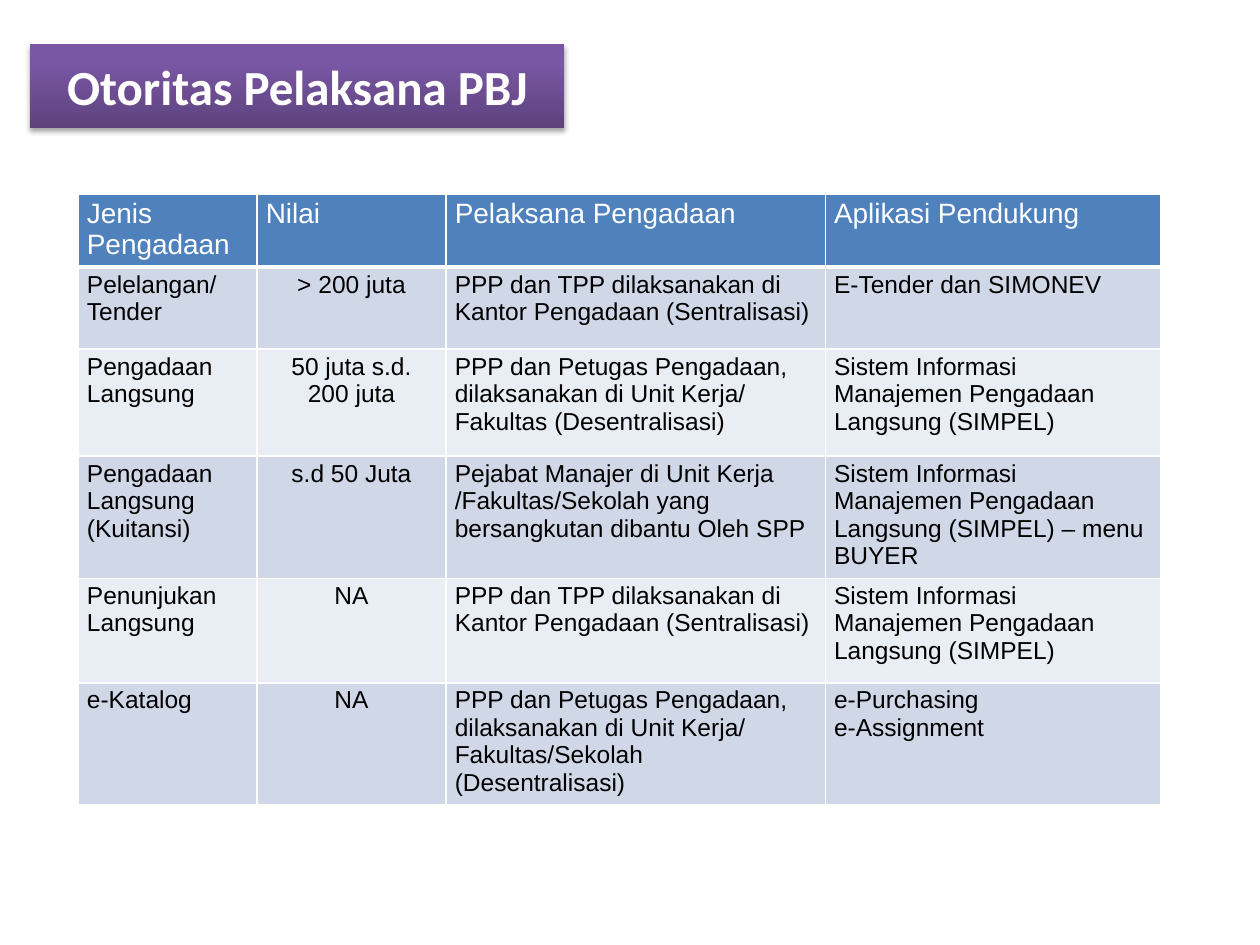
from lxml.etree import SubElement
from pptx import Presentation
from pptx.dml.color import RGBColor
from pptx.enum.shapes import MSO_SHAPE
from pptx.enum.text import MSO_ANCHOR, PP_ALIGN
from pptx.oxml import parse_xml
from pptx.oxml.ns import nsdecls, qn
from pptx.util import Inches, Pt

WHITE, BLACK = "FFFFFF", "000000"
HEADER_FILL = "4F81BD"
BAND_FILLS = ["E9EDF4", "D0D8E8"]
TITLE_STOPS = [(0, "5D427D"), (80, "7A57A5"), (100, "7A56A7")]

COL_WIDTHS = [1.42, 1.5, 3.01, 2.66]
ROW_HEIGHTS = [0.58, 0.65, 0.85, 0.97, 0.83, 0.97]
VALUE_COL = 1
CENTRAL = "PPP dan TPP dilaksanakan di Kantor Pengadaan (Sentralisasi)"
SIMPEL = "Sistem Informasi Manajemen Pengadaan Langsung (SIMPEL)"
ROWS = [
    ["Jenis Pengadaan", "Nilai", "Pelaksana Pengadaan", "Aplikasi Pendukung"],
    ["Pelelangan/ Tender", "> 200 juta", CENTRAL, "E-Tender dan SIMONEV"],
    ["Pengadaan Langsung", "50 juta s.d.\n200 juta",
     "PPP dan Petugas Pengadaan, dilaksanakan di Unit Kerja/ Fakultas (Desentralisasi)",
     SIMPEL],
    ["Pengadaan Langsung (Kuitansi)", "s.d 50 Juta",
     "Pejabat Manajer di Unit Kerja /Fakultas/Sekolah yang bersangkutan dibantu Oleh SPP",
     f"{SIMPEL} – menu BUYER"],
    ["Penunjukan Langsung", "NA", CENTRAL, SIMPEL],
    ["e-Katalog", "NA",
     "PPP dan Petugas Pengadaan, dilaksanakan di Unit Kerja/ Fakultas/Sekolah (Desentralisasi)",
     "e-Purchasing\ne-Assignment"],
]


def rgb(value):
    return RGBColor.from_string(value)


def set_attrs(obj, values):
    for name, value in values.items():
        setattr(obj, name, value)


def write_text(tf, text, align, color, **font):
    """Fill a text frame, one paragraph for each line of text."""
    tf.text = text
    for p in tf.paragraphs:
        p.alignment = align
        for r in p.runs:
            set_attrs(r.font, font)
            r.font.color.rgb = rgb(color)


def add_border(cell, side, width):
    ln = SubElement(cell._tc.get_or_add_tcPr(), qn(f"a:ln{side}"), w=str(Pt(width)))
    fill = SubElement(ln, qn("a:solidFill"))
    SubElement(fill, qn("a:srgbClr"), val=WHITE)


def format_cell(cell, text, row, col):
    header = row == 0
    set_attrs(cell, {
        "margin_left": Inches(0.07), "margin_right": Inches(0.07),
        "margin_top": Inches(0.03), "margin_bottom": Inches(0.03),
    })
    for side in "LRTB":
        add_border(cell, side, 3 if header and side == "B" else 1)
    cell.fill.solid()
    cell.fill.fore_color.rgb = rgb(HEADER_FILL if header else BAND_FILLS[row % 2])
    centred = col == VALUE_COL and not header
    write_text(cell.text_frame, text, PP_ALIGN.CENTER if centred else PP_ALIGN.LEFT,
               WHITE if header else BLACK,
               name="Arial", size=Pt(16 if header else 14), bold=False)


def add_procurement_table(slide):
    table = slide.shapes.add_table(
        len(ROWS), len(COL_WIDTHS), Inches(0.62), Inches(1.54),
        Inches(sum(COL_WIDTHS)), Inches(sum(ROW_HEIGHTS))).table
    set_attrs(table, {"first_row": False, "horz_banding": False})
    for column, width in zip(table.columns, COL_WIDTHS):
        column.width = Inches(width)
    for row, height in zip(table.rows, ROW_HEIGHTS):
        row.height = Inches(height)
    for i, texts in enumerate(ROWS):
        for j, text in enumerate(texts):
            format_cell(table.cell(i, j), text, i, j)


def add_gradient_and_shadow(sp):
    """Give a shape the upward title gradient and a soft shadow below."""
    stops = "".join(f'<a:gs pos="{pos * 1000}"><a:srgbClr val="{color}"/></a:gs>'
                    for pos, color in TITLE_STOPS)
    gradient = parse_xml(
        f'<a:gradFill {nsdecls("a")} rotWithShape="1"><a:gsLst>{stops}</a:gsLst>'
        '<a:lin ang="16200000" scaled="0"/></a:gradFill>')
    shadow = parse_xml(
        f'<a:effectLst {nsdecls("a")}><a:outerShdw blurRad="{Pt(3.1)}" dist="{Pt(1.8)}" '
        f'dir="5400000" rotWithShape="0"><a:srgbClr val="{BLACK}">'
        '<a:alpha val="35000"/></a:srgbClr></a:outerShdw></a:effectLst>')
    sp.line.fill.background()
    props = sp._element.spPr
    props.find(qn("a:prstGeom")).addnext(gradient)
    props.find(qn("a:ln")).addnext(shadow)


def add_title(slide, text):
    sp = slide.shapes.add_shape(MSO_SHAPE.RECTANGLE, Inches(0.24), Inches(0.35),
                                Inches(4.24), Inches(0.67))
    add_gradient_and_shadow(sp)
    tf = sp.text_frame
    set_attrs(tf, {
        "word_wrap": True, "vertical_anchor": MSO_ANCHOR.MIDDLE,
        "margin_left": Inches(0.04), "margin_right": Inches(0.04),
        "margin_top": Inches(0.05), "margin_bottom": Inches(0.05),
    })
    write_text(tf, text, PP_ALIGN.CENTER, WHITE, name="Calibri", size=Pt(28), bold=True)


def main():
    prs = Presentation()
    set_attrs(prs, {"slide_width": Inches(10), "slide_height": Inches(7.5)})
    slide = prs.slides.add_slide(prs.slide_layouts[6])
    add_procurement_table(slide)
    add_title(slide, "Otoritas Pelaksana PBJ")
    prs.save("out.pptx")


if __name__ == "__main__":
    main()
